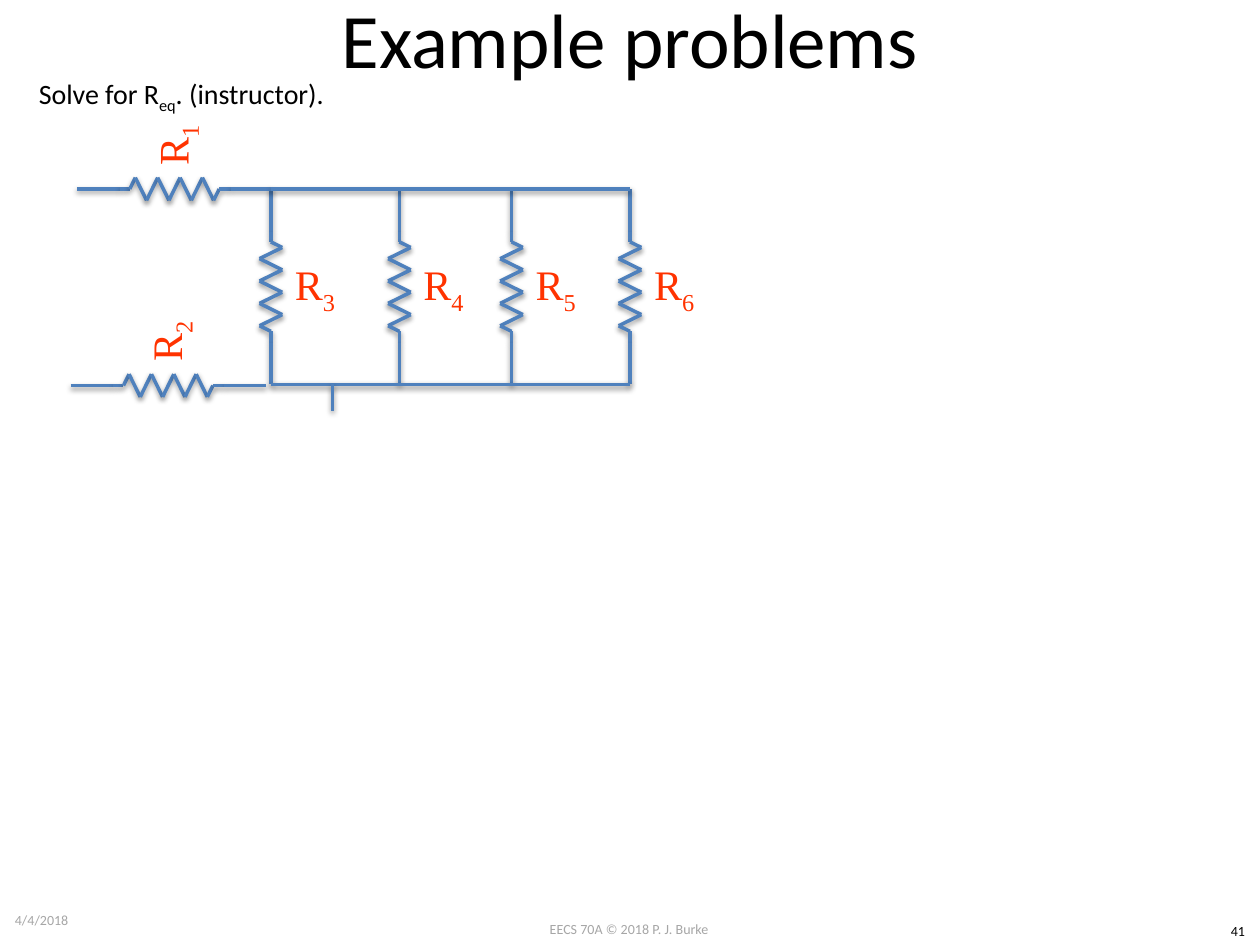
from itertools import pairwise

from lxml import etree
from pptx import Presentation
from pptx.dml.color import RGBColor
from pptx.enum.shapes import MSO_CONNECTOR
from pptx.enum.text import MSO_ANCHOR as Anchor, PP_ALIGN as Align
from pptx.oxml import parse_xml
from pptx.oxml.ns import nsdecls
from pptx.util import Inches, Pt

BLACK = RGBColor(0x00, 0x00, 0x00)
GRAY = RGBColor(0xA6, 0xA6, 0xA6)
BLUE = RGBColor(0x4F, 0x81, 0xBD)
RED = RGBColor(0xFF, 0x33, 0x00)

TITLE = {"name": "Calibri", "size": Pt(44), "color": BLACK}
BODY = {"name": "Calibri", "size": Pt(16), "color": BLACK}
FOOTER = {"name": "Calibri", "size": Pt(8), "color": GRAY}
NUMBER = {**FOOTER, "color": BLACK}
LABEL = {"name": "Times New Roman", "size": Pt(24), "color": RED}

CENTERED_TOP = {"align": Align.CENTER, "anchor": Anchor.TOP}
CENTERED = {"align": Align.CENTER, "anchor": Anchor.MIDDLE}
LEFT_TOP = {"align": Align.LEFT, "anchor": Anchor.TOP}
LEFT_MIDDLE = {"align": Align.LEFT, "anchor": Anchor.MIDDLE}

TEXTS = [
    (["EECS 70A © 2018 P. J. Burke"], (3.83, 7.26, 2.33, 0.24), FOOTER, CENTERED_TOP),
    (["41"], (9.65, 7.27, 0.35, 0.24), NUMBER, CENTERED_TOP),
    (["Example problems"], (0.5, -0.33, 9, 1.25), TITLE, CENTERED),
    (["Solve for R", "eq", ". (instructor)."], (0.21, 0.56, 2.6, 0.37), BODY, LEFT_TOP),
    (["4/4/2018"], (0.02, 7.1, 2.33, 0.4), FOOTER, LEFT_MIDDLE),
]

TOP, BOTTOM = 1.5, 3.05
RESISTORS = [
    ("3", 2.15, TOP, True),
    ("4", 3.17, TOP, True),
    ("2", 0.56, 3.06, False),
    ("6", 5, TOP, True),
    ("5", 4.06, TOP, True),
    ("1", 0.61, TOP, False),
]
WIRES = [
    ((2.15, BOTTOM), (5, BOTTOM)),
    ((2.15, TOP), (5, TOP)),
    ((2.64, 3.26), (2.64, BOTTOM)),
]

LENGTH, LEAD, ZIGZAG_START, ZIGZAG_END, TAIL = 1.55, 0.34, 0.42, 1.13, 1.22
PEAKS, AMPLITUDE = 8, 0.09
LABEL_WIDTH, LABEL_HEIGHT = 1.19, 0.73
LABEL_ALONG, LABEL_ACROSS = 0.78, 0.35


def add_text(shapes, parts, box, style, layout):
    shape = shapes.add_textbox(*map(Inches, box))
    frame = shape.text_frame
    frame.word_wrap = True
    frame.vertical_anchor = layout["anchor"]
    paragraph = frame.paragraphs[0]
    paragraph.alignment = layout["align"]
    for index, part in enumerate(parts):
        run = paragraph.add_run()
        run.text = part
        for key, value in style.items():
            if key == "color":
                run.font.color.rgb = value
            else:
                setattr(run.font, key, value)
        if index % 2:
            run.font._element.set("baseline", "-25000")
    return shape


def add_shadow(connector):
    effects = parse_xml(f"<a:effectLst {nsdecls('a')}/>")
    shadow = etree.SubElement(
        effects, effects.tag.replace("effectLst", "outerShdw"),
        blurRad=str(Pt(3.1)), dist=str(Pt(1.6)), dir="5400000", rotWithShape="0")
    color = etree.SubElement(
        shadow, effects.tag.replace("effectLst", "srgbClr"), val=str(BLACK))
    etree.SubElement(color, effects.tag.replace("effectLst", "alpha"), val="38000")
    connector._element.spPr.append(effects)


def add_wire(shapes, start, end):
    connector = shapes.add_connector(
        MSO_CONNECTOR.STRAIGHT, *map(Inches, (*start, *end)))
    connector.line.color.rgb = BLUE
    connector.line.width = Pt(2)
    add_shadow(connector)


def add_resistor(shapes, number, left, top, vertical):
    def place(along, across):
        if vertical:
            return left + across, top + along
        return left + along, top - across

    pitch = (ZIGZAG_END - ZIGZAG_START) / PEAKS
    peaks = [(ZIGZAG_START + pitch * (i + 0.5), AMPLITUDE * (-1) ** i)
             for i in range(PEAKS)]
    outline = [(0, 0), (LEAD, 0), (ZIGZAG_START, 0), *peaks,
               (ZIGZAG_END, 0), (TAIL, 0), (LENGTH, 0)]
    group = shapes.add_group_shape()
    center_x, center_y = place(LABEL_ALONG, LABEL_ACROSS)
    box = (center_x - LABEL_WIDTH / 2, center_y - LABEL_HEIGHT / 2,
           LABEL_WIDTH, LABEL_HEIGHT)
    label = add_text(group.shapes, ["R", number], box, LABEL, CENTERED)
    label.rotation = 0 if vertical else 270
    for start, end in pairwise(outline):
        add_wire(group.shapes, place(*start), place(*end))


def main():
    presentation = Presentation()
    presentation.slide_width = Inches(10)
    presentation.slide_height = Inches(7.5)
    slide = presentation.slides.add_slide(presentation.slide_layouts[6])
    for text in TEXTS:
        add_text(slide.shapes, *text)
    for resistor in RESISTORS:
        add_resistor(slide.shapes, *resistor)
    for wire in WIRES:
        add_wire(slide.shapes, *wire)
    presentation.save("out.pptx")


if __name__ == "__main__":
    main()
